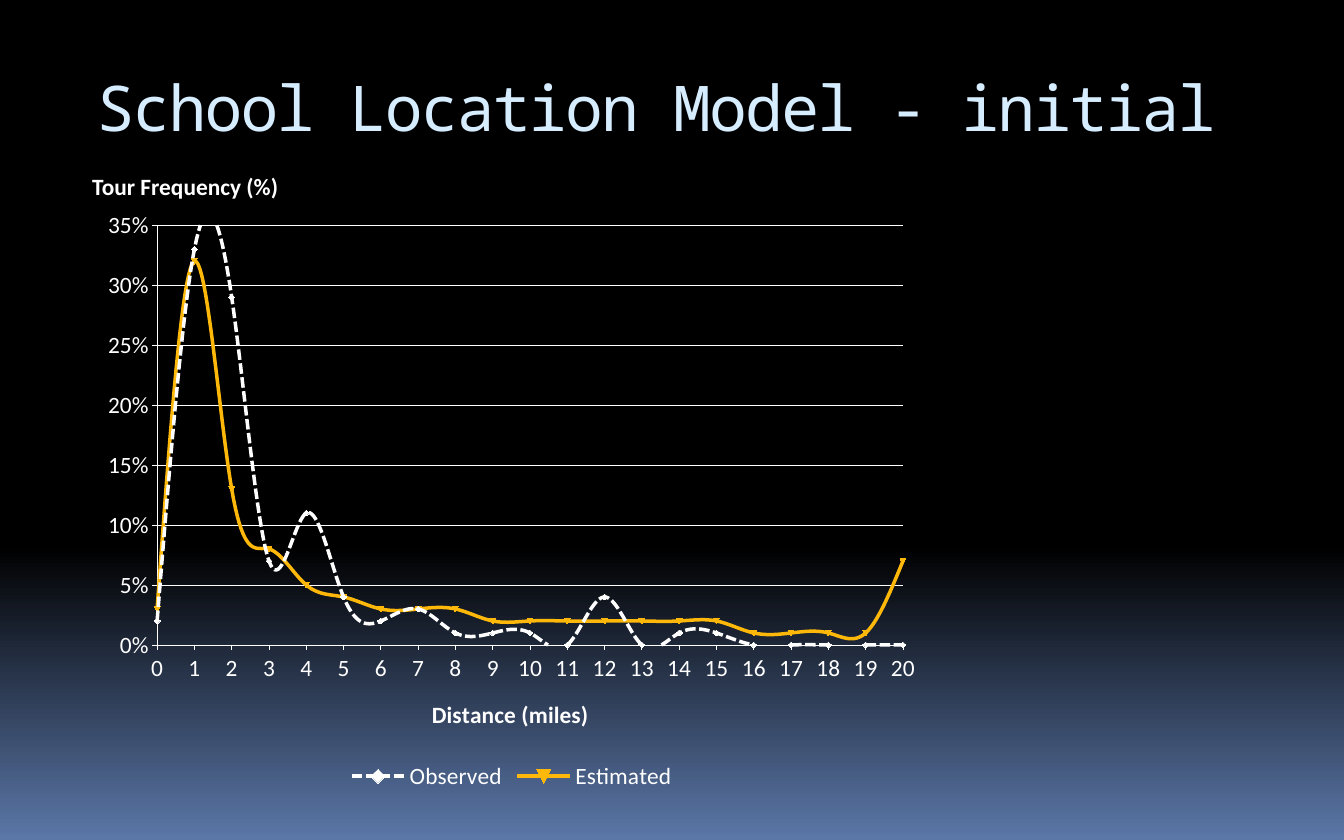
"""Build a slide with a scatter chart of observed and estimated tour lengths."""
from dataclasses import dataclass
from typing import Optional

from lxml import etree
from pptx import Presentation, util as u
from pptx.chart import axis as axes, chart as charts, data
from pptx.dml.color import RGBColor
from pptx.enum import chart as kinds, dml, text
from pptx.oxml import ns
from pptx.slide import Slide
from pptx.text.text import Font

BLACK = RGBColor(0x00, 0x00, 0x00)
WHITE = RGBColor(0xFF, 0xFF, 0xFF)
DUSK = RGBColor(0x5B, 0x77, 0xA8)
ICE = RGBColor(0xD6, 0xEC, 0xFF)
AMBER = RGBColor(0xFE, 0xB8, 0x0A)


@dataclass
class Curve:
    name: str
    color: RGBColor
    dash: Optional[dml.MSO_LINE]
    percents: list[int]


@dataclass
class Scale:
    maximum: float
    step: float
    number_format: str
    grid: bool


CURVES = [
    Curve("Observed", WHITE, dml.MSO_LINE.SQUARE_DOT,
          [2, 33, 29, 7, 11, 4, 2, 3, 1, 1, 1, 0, 4, 0, 1, 1, 0, 0, 0, 0, 0]),
    Curve("Estimated", AMBER, None,
          [3, 32, 13, 8, 5, 4, 3, 3, 3, 2, 2, 2, 2, 2, 2, 2, 1, 1, 1, 1, 7]),
]
DISTANCE = Scale(20, 1, "0", False)
FREQUENCY = Scale(0.35, 0.05, "0%", True)


def style_font(font: Font, size: float, color: RGBColor = WHITE,
               name: str = "Calibri", bold: bool = False) -> None:
    font.size, font.name, font.bold = u.Pt(size), name, bold
    font.color.rgb = color


def place(parent: etree._Element, **position: float) -> None:
    layout = parent.find(ns.qn("c:layout"))
    if layout is None:
        layout = etree.Element(ns.qn("c:layout"))
        parent.insert(0, layout)
    manual = etree.SubElement(layout, ns.qn("c:manualLayout"))
    if "w" in position:
        etree.SubElement(manual, ns.qn("c:layoutTarget"), val="inner")
    for mode in ("xMode", "yMode"):
        etree.SubElement(manual, ns.qn(f"c:{mode}"), val="edge")
    for key, value in position.items():
        etree.SubElement(manual, ns.qn(f"c:{key}"), val=str(value))


def style_axis(axis: axes.ValueAxis, scale: Scale) -> None:
    axis.minimum_scale, axis.maximum_scale = 0, scale.maximum
    axis.major_unit = scale.step
    axis.has_major_gridlines = scale.grid
    axis.major_tick_mark = kinds.XL_TICK_MARK.OUTSIDE
    axis.minor_tick_mark = kinds.XL_TICK_MARK.NONE
    axis.tick_labels.number_format = scale.number_format
    axis.tick_labels.number_format_is_linked = False
    style_font(axis.tick_labels.font, 20)
    lines = [axis.format.line]
    if scale.grid:
        lines.append(axis.major_gridlines.format.line)
    for line in lines:
        line.color.rgb = WHITE
        line.width = u.Pt(0.75)


def style_curves(chart: charts.Chart) -> None:
    plot = chart.plots[0]
    plot.vary_by_categories = False
    for series, curve in zip(plot.series, CURVES):
        line = series.format.line
        line.color.rgb = curve.color
        line.width = u.Pt(3)
        if curve.dash is not None:
            line.dash_style = curve.dash
        marker = series.marker
        marker.size = 5
        marker.format.fill.solid()
        marker.format.fill.fore_color.rgb = curve.color
        marker.format.line.color.rgb = curve.color
    for number, entry in enumerate(chart.element.xpath(".//c:ser"), 1):
        entry.find(ns.qn("c:idx")).set("val", str(number))
        smooth = entry.find(ns.qn("c:smooth"))
        if smooth is None:
            smooth = etree.SubElement(entry, ns.qn("c:smooth"))
        smooth.set("val", "1")


def add_frequency_chart(page: Slide) -> None:
    values = data.XyChartData()
    for curve in CURVES:
        points = values.add_series(curve.name)
        for mile, percent in enumerate(curve.percents):
            points.add_data_point(mile, percent / 100)
    chart = page.shapes.add_chart(
        kinds.XL_CHART_TYPE.XY_SCATTER_SMOOTH, u.Cm(2.77), u.Cm(6.02),
        u.Cm(25.4), u.Cm(18.03), values).chart
    chart.has_title = False
    style_font(chart.font, 10)
    style_axis(chart.category_axis, DISTANCE)
    style_axis(chart.value_axis, FREQUENCY)
    style_curves(chart)

    caption = chart.category_axis.axis_title.text_frame
    caption.text = "Distance (miles)"
    style_font(caption.paragraphs[0].runs[0].font, 20, bold=True)
    place(chart.element.xpath(".//c:valAx/c:title")[0], x=0.4, y=0.83)
    place(chart.element.xpath(".//c:plotArea")[0],
          x=0.078, y=0.044, w=0.888, h=0.704)

    chart.has_legend = True
    chart.legend.position = kinds.XL_LEGEND_POSITION.BOTTOM
    chart.legend.include_in_layout = False
    style_font(chart.legend.font, 20)


def paint_background(page: Slide) -> None:
    fill = page.background.fill
    fill.gradient()
    fill.gradient_angle = 270
    for stop, position, color in zip(fill.gradient_stops, (0.65, 1), (BLACK, DUSK)):
        stop.position = position
        stop.color.rgb = color


def write_title(page: Slide) -> None:
    title = page.shapes.title
    title.left, title.top = u.Cm(2.54), u.Cm(1.9)
    title.width, title.height = u.Cm(36.07), u.Cm(3.38)
    frame = title.text_frame
    frame.text = "School Location Model - initial"
    frame.auto_size = text.MSO_AUTO_SIZE.NONE
    frame.vertical_anchor = text.MSO_ANCHOR.TOP
    frame.margin_left = frame.margin_right = u.Cm(0.38)
    frame.margin_top = frame.margin_bottom = u.Cm(0.18)
    para = frame.paragraphs[0]
    para.alignment = text.PP_ALIGN.LEFT
    span = para.runs[0]
    style_font(span.font, 54, ICE, "Noto Sans Mono")
    span.font._element.set("spc", "-150")


def add_frequency_label(page: Slide) -> None:
    box = page.shapes.add_textbox(u.Cm(2.54), u.Cm(5.08), u.Cm(6.76), u.Cm(1.12))
    frame = box.text_frame
    frame.word_wrap = True
    frame.text = "Tour Frequency (%)"
    style_font(frame.paragraphs[0].runs[0].font, 20, bold=True)


def main() -> None:
    deck = Presentation()
    deck.slide_width, deck.slide_height = u.Cm(40.64), u.Cm(25.4)
    page = deck.slides.add_slide(deck.slide_layouts[5])
    paint_background(page)
    write_title(page)
    add_frequency_chart(page)
    add_frequency_label(page)
    deck.save("out.pptx")


if __name__ == "__main__":
    main()
